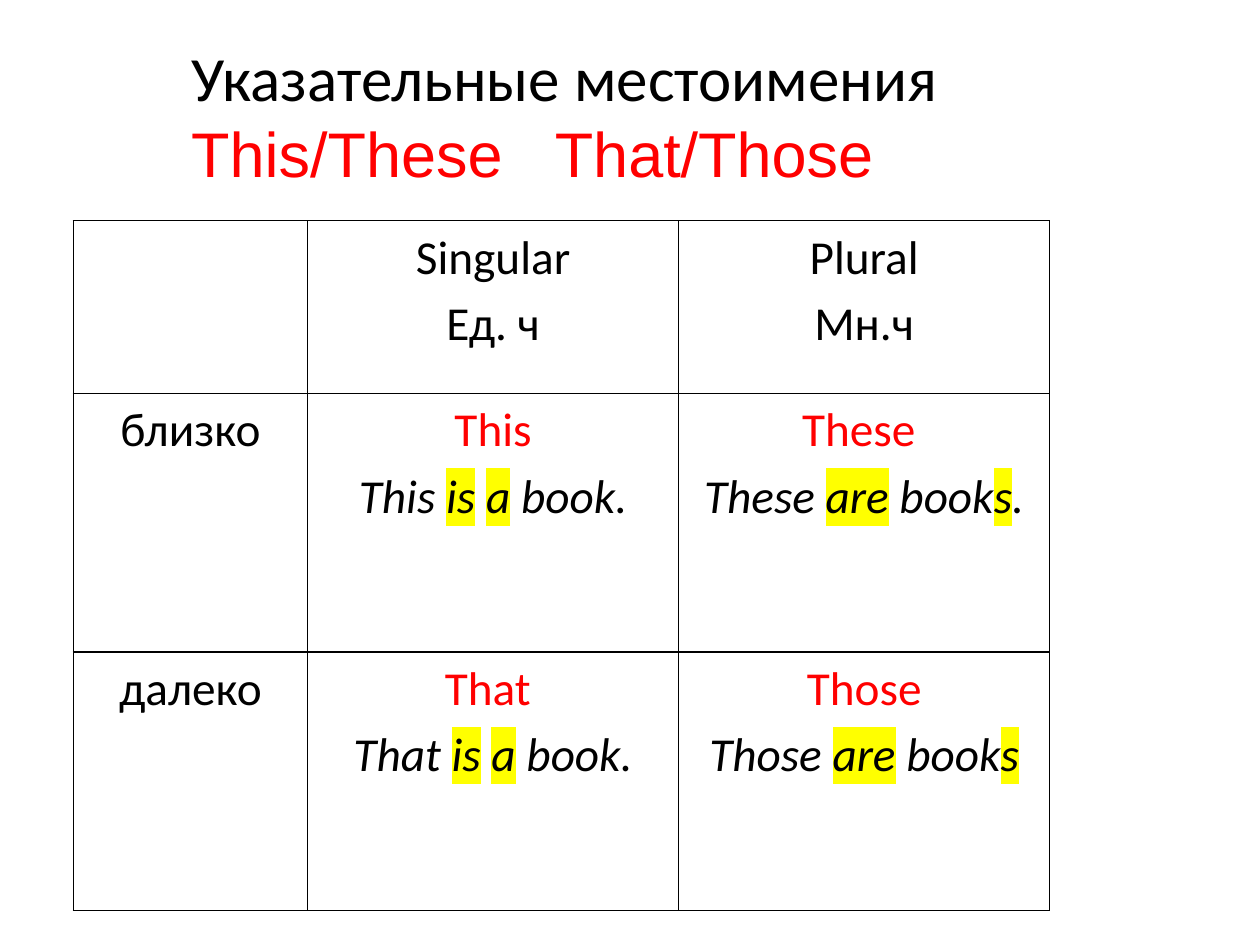
from lxml import etree
from pptx import Presentation
from pptx.dml.color import RGBColor
from pptx.enum.text import MSO_ANCHOR, MSO_AUTO_SIZE, PP_ALIGN
from pptx.oxml.ns import qn
from pptx.util import Cm, Pt

CENTER, LEFT = PP_ALIGN.CENTER, PP_ALIGN.LEFT
MIDDLE, TOP = MSO_ANCHOR.MIDDLE, MSO_ANCHOR.TOP
NO_AUTOFIT = MSO_AUTO_SIZE.NONE
BLACK, RED, YELLOW = "000000", "FF0000", "FFFF00"

TITLE = [("Указательные местоимения", "Calibri", BLACK),
         ("This/These\tThat/Those", "Arial", RED)]
TITLE_TAB = Cm(7.33)

HEADERS = [[], ["Singular", "Ед. ч"], ["Plural", "Мн.ч"]]
# Each example alternates plain and highlighted pieces, starting with plain.
ROWS = [
    ("близко", [("This", ["This ", "is", " ", "a", " book."]),
                ("These ", ["These ", "are", " book", "s", "."])]),
    ("далеко", [("That ", ["That ", "is", " ", "a", " book."]),
                ("Those", ["Those ", "are", " book", "s"])]),
]
COL_WIDTHS = [Cm(4.72), Cm(7.48), Cm(7.48)]
ROW_HEIGHTS = [Cm(3.48), Cm(5.21), Cm(5.21)]


def rgb(color):
    return RGBColor.from_string(color)


def add_run(p, text, size, color=BLACK, font="Calibri", italic=False, highlight=None):
    r = p.add_run()
    r.text = text
    r.font.size, r.font.italic = Pt(size), italic
    r.font.color.rgb = rgb(color)
    if highlight:
        mark = etree.SubElement(r.font._element, qn("a:highlight"))
        etree.SubElement(mark, qn("a:srgbClr"), val=highlight)
    r.font.name = font


def add_title(slide):
    sp = slide.shapes.title
    sp.left, sp.top, sp.width, sp.height = Cm(3.6), Cm(0.64), Cm(16.87), Cm(3.33)
    tf = sp.text_frame
    tf.word_wrap, tf.auto_size, tf.vertical_anchor = True, NO_AUTOFIT, MIDDLE
    for i, (text, font, color) in enumerate(TITLE):
        p = tf.add_paragraph() if i else tf.paragraphs[0]
        p.alignment = LEFT
        if "\t" in text:
            tabs = etree.SubElement(p._p.get_or_add_pPr(), qn("a:tabLst"))
            etree.SubElement(tabs, qn("a:tab"), pos=str(TITLE_TAB), algn="l")
        add_run(p, text, 36, color, font)


def format_cell(cell):
    cell.margin_left = cell.margin_right = Cm(0.15)
    cell.margin_top = cell.margin_bottom = 0
    cell.vertical_anchor = TOP
    tc_pr = cell._tc.get_or_add_tcPr()
    for side in ("lnL", "lnR", "lnT", "lnB"):
        ln = etree.SubElement(tc_pr, qn(f"a:{side}"), w=str(Pt(1)))
        fill = etree.SubElement(ln, qn("a:solidFill"))
        etree.SubElement(fill, qn("a:srgbClr"), val=BLACK)
    cell.fill.background()


def fill_cell(cell, lines):
    """Write lines, each a list of (text, run options) pairs."""
    tf = cell.text_frame
    for i, line in enumerate(lines):
        p = tf.add_paragraph() if i else tf.paragraphs[0]
        p.alignment, p.line_spacing = CENTER, 1.15
        for text, options in line:
            add_run(p, text, 27, **options)


def plain(text):
    return [(text, {})]


def example(pieces):
    return [(text, {"italic": True, "highlight": YELLOW if i % 2 else None})
            for i, text in enumerate(pieces)]


def add_pronoun_table(slide):
    grid = [[[plain(text) for text in header] for header in HEADERS]]
    for distance, forms in ROWS:
        grid.append([[plain(distance)]] + [
            [[(word, {"color": RED})], example(pieces)] for word, pieces in forms])

    table = slide.shapes.add_table(len(grid), len(HEADERS), Cm(1.48), Cm(4.45),
                                   sum(COL_WIDTHS), sum(ROW_HEIGHTS)).table
    table.first_row = table.horz_banding = False
    for column, width in zip(table.columns, COL_WIDTHS):
        column.width = width
    for row, height, contents in zip(table.rows, ROW_HEIGHTS, grid):
        row.height = height
        for cell, lines in zip(row.cells, contents):
            format_cell(cell)
            fill_cell(cell, lines)


def main():
    prs = Presentation()
    prs.slide_width, prs.slide_height = Cm(25.4), Cm(19.05)
    slide = prs.slides.add_slide(prs.slide_layouts[5])
    add_title(slide)
    add_pronoun_table(slide)
    prs.save("out.pptx")


if __name__ == "__main__":
    main()
